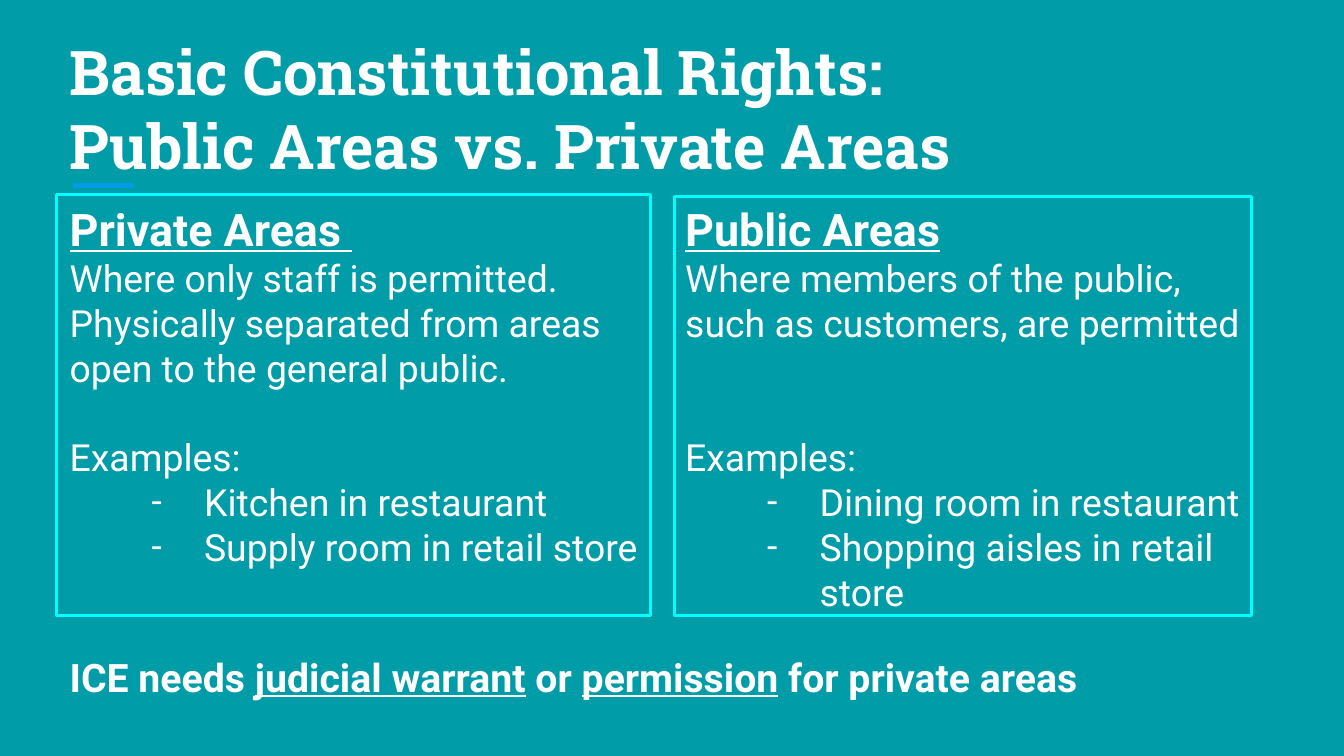
"""Slide that compares private and public areas under basic constitutional rights."""
from pptx import Presentation
from pptx import util as u
from pptx.dml.color import RGBColor
from pptx.enum import shapes, text
from pptx.oxml.ns import qn
from lxml import etree

HUES = {"back": "009CA7", "text": "FFFFFF", "rule": "039BE5", "frame": "00FFFF"}


def hue(name):
    return RGBColor.from_string(HUES[name])


def write(par, words, size=20, font="Roboto", bold=False, under=False):
    run = par.add_run()
    run.text = words
    face = run.font
    face.name, face.size = font, u.Pt(size)
    face.bold, face.underline = bold, under
    face.color.rgb = hue("text")


def dash(par):
    props = par._p.get_or_add_pPr()
    props.set("marL", str(u.Inches(1)))
    props.set("indent", str(u.Inches(-0.39)))
    tint = etree.SubElement(props, qn("a:buClr"))
    etree.SubElement(tint, qn("a:srgbClr"), val=HUES["text"])
    etree.SubElement(props, qn("a:buFont"), typeface="Roboto")
    etree.SubElement(props, qn("a:buChar"), char="-")


class Deck:
    """Holds the slide style and the current slide."""

    def __init__(self):
        self.show = Presentation()
        self.show.slide_width = u.Inches(10)
        self.show.slide_height = u.Inches(10) * 9 // 16
        self.slide = self.show.slides.add_slide(self.show.slide_layouts[6])
        fill = self.slide.background.fill
        fill.solid()
        fill.fore_color.rgb = hue("back")

    def rule(self, left, right, top):
        line = self.slide.shapes.add_connector(
            shapes.MSO_CONNECTOR.STRAIGHT,
            *map(u.Inches, (left, top, right, top)))
        line.line.color.rgb = hue("rule")
        line.line.width = u.Pt(3)
        etree.SubElement(line._element.spPr, qn("a:effectLst"))

    def frame(self, *spot):
        box = self.slide.shapes.add_shape(
            shapes.MSO_SHAPE.RECTANGLE, *map(u.Inches, spot))
        box.shadow.inherit = False
        box.fill.background()
        box.line.color.rgb = hue("frame")
        box.line.width = u.Pt(1.5)

    def text(self, *spot, anchor=text.MSO_ANCHOR.TOP):
        body = self.slide.shapes.add_textbox(*map(u.Inches, spot)).text_frame
        body.word_wrap = True
        body.vertical_anchor = anchor
        body.margin_left = body.margin_right = u.Inches(0.1)
        body.margin_top = body.margin_bottom = u.Inches(0.1)
        return body

    def panel(self, spot, head, about, gap, items):
        body = self.text(*spot)
        write(body.paragraphs[0], head, size=24, bold=True, under=True)
        write(body.add_paragraph(), about)
        par = body.add_paragraph()
        par.space_before = u.Pt(gap)
        write(par, "Examples:")
        for item in items:
            par = body.add_paragraph()
            dash(par)
            write(par, item)


def main():
    deck = Deck()
    deck.rule(0.54, 1, 1.38)

    title = deck.text(0.42, 0.7, 9.15, 0.75, anchor=text.MSO_ANCHOR.BOTTOM)
    slab = {"size": 33, "font": "Roboto Slab", "bold": True}
    write(title.paragraphs[0], "Basic Constitutional Rights:", **slab)
    write(title.add_paragraph(), "Public Areas vs. Private Areas", **slab)

    deck.panel((0.42, 1.4, 4.58, 3.37), "Private Areas ",
               "Where only staff is permitted. Physically separated from "
               "areas open to the general public.", 24,
               ["Kitchen in restaurant", "Supply room in retail store"])
    deck.panel((5, 1.4, 4.42, 3.37), "Public Areas",
               "Where members of the public, such as customers, are permitted",
               48, ["Dining room in restaurant", "Shopping aisles in retail store"])

    note = deck.text(0.42, 4.76, 8.69, 0.56).paragraphs[0]
    note.space_before = note.space_after = u.Pt(16)
    parts = ["ICE needs ", "judicial warrant", " or ", "permission",
             " for private areas"]
    for spot, words in enumerate(parts):
        write(note, words, size=21, bold=True, under=spot % 2 == 1)

    deck.frame(0.42, 1.45, 4.42, 3.13)
    deck.frame(5.02, 1.46, 4.29, 3.12)
    deck.show.save("out.pptx")


if __name__ == "__main__":
    main()
